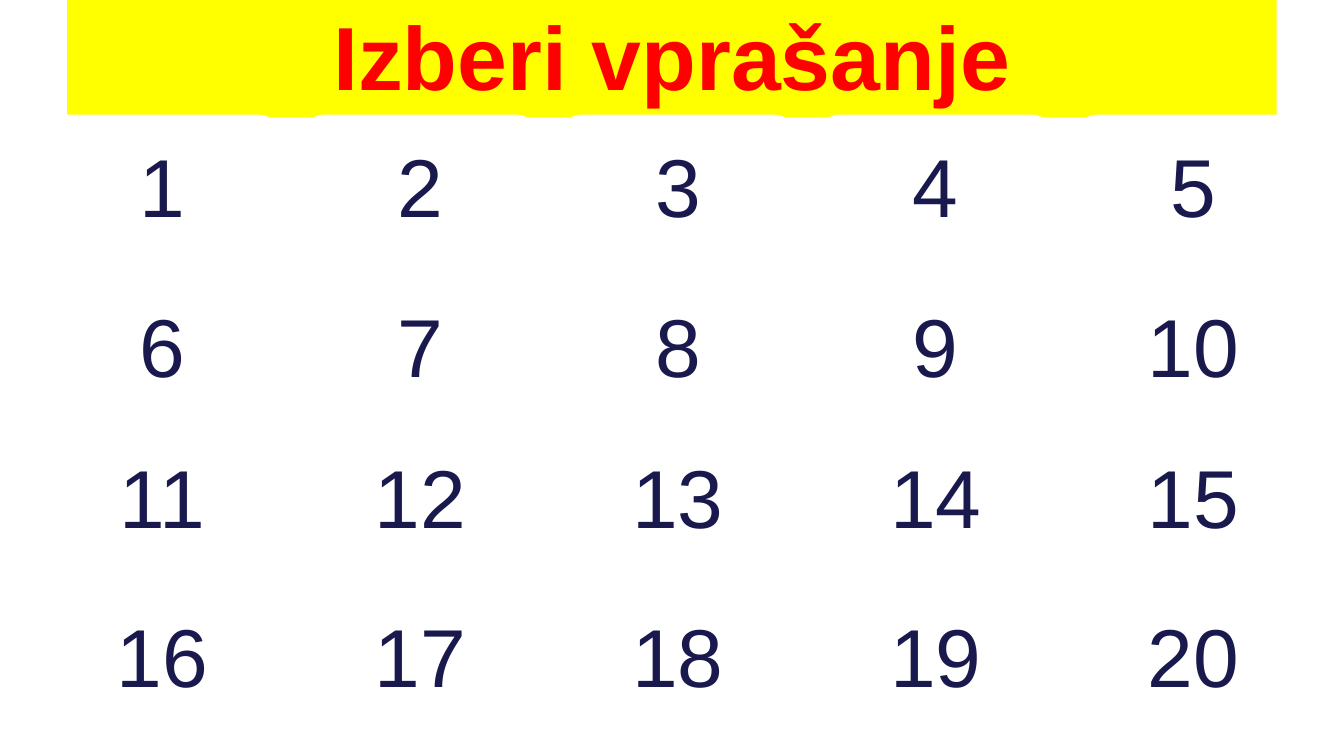
"""Build a question board: a title banner above a grid of twenty numbered tiles."""
import pptx
import pptx.dml.color
import pptx.enum.shapes
import pptx.enum.text
import pptx.util
from pptx.util import Cm

COLOURS = {"banner": "FFFF00", "title": "FF0000", "number": "19194D", "outline": "FFFFFF"}
COLUMNS = 5
FIRST_LEFT, COLUMN_STEP = 0.85, 4.87
ROW_TOPS = [2.22, 5.24, 8.1, 11.11]


def colour(name):
    return pptx.dml.color.RGBColor.from_string(COLOURS[name])


def add_label(page, kind, left, top, width, height, text, size, ink):
    shape = page.shapes.add_shape(kind, Cm(left), Cm(top), Cm(width), Cm(height))
    shape.shadow.inherit = False
    shape.text_frame.vertical_anchor = pptx.enum.text.MSO_ANCHOR.MIDDLE
    para = shape.text_frame.paragraphs[0]
    para.text = text
    para.alignment = pptx.enum.text.PP_ALIGN.CENTER
    para.font.name = "Arial"
    para.font.size = pptx.util.Pt(size)
    para.font.color.rgb = colour(ink)
    return shape


deck = pptx.Presentation()
deck.slide_width, deck.slide_height = Cm(25.4), Cm(14.29)
page = deck.slides.add_slide(deck.slide_layouts[6])
shapes = pptx.enum.shapes.MSO_SHAPE

banner = add_label(page, shapes.RECTANGLE, 1.27, -0.16, 22.86, 2.38,
                   "Izberi vprašanje", 48, "title")
banner.fill.solid()
banner.fill.fore_color.rgb = colour("banner")
banner.line.fill.background()
banner.text_frame.paragraphs[0].font.bold = True

for row, top in enumerate(ROW_TOPS):
    for column in range(COLUMNS):
        number = row * COLUMNS + column + 1
        left = FIRST_LEFT + column * COLUMN_STEP
        tile = add_label(page, shapes.ROUNDED_RECTANGLE, left, top, 4.45, 2.54,
                         str(number), 44, "number")
        tile.fill.background()
        tile.line.color.rgb = colour("outline")
        tile.line.width = pptx.util.Pt(3)
        tile.text_frame.word_wrap = False

deck.save("out.pptx")
